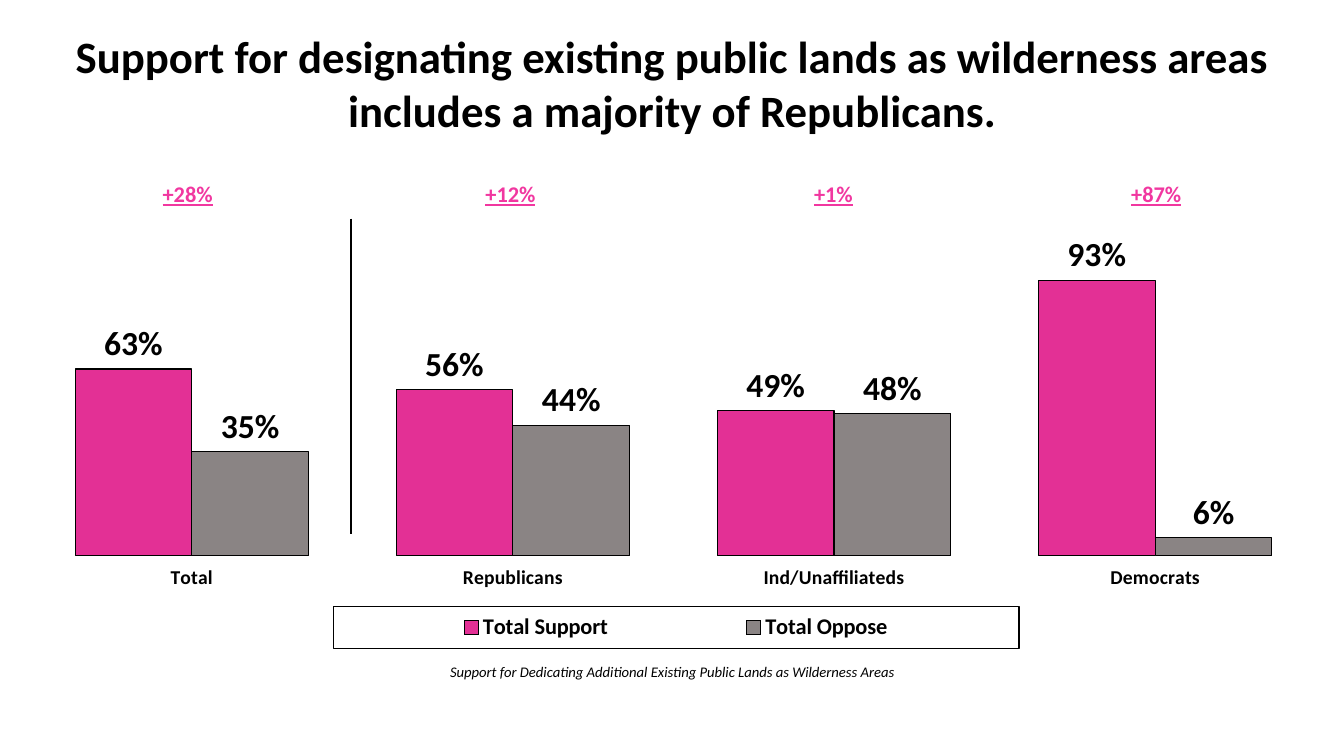
from pptx import Presentation
from pptx.chart.data import CategoryChartData
from pptx.dml.color import RGBColor
from pptx.enum.chart import XL_CHART_TYPE as Kind, XL_LABEL_POSITION as Spot
from pptx.enum.chart import XL_LEGEND_POSITION as Side, XL_TICK_MARK as Tick
from pptx.enum.shapes import MSO_CONNECTOR as Link
from pptx.enum.text import MSO_ANCHOR as Anchor, MSO_AUTO_SIZE as Auto, PP_ALIGN as Align
from pptx.oxml import parse_xml
from pptx.oxml.ns import nsdecls, qn
from pptx.util import Inches, Pt

BLACK = RGBColor(0x00, 0x00, 0x00)
PINK = RGBColor(0xE3, 0x30, 0x95)
ROSE = RGBColor(0xF1, 0x37, 0xA0)
GRAY = RGBColor(0x8A, 0x84, 0x84)

GROUPS = ["Total", "Republicans", "Ind/Unaffiliateds", "Democrats"]
LEADS = ["+28%", "+12%", "+1%", "+87%"]
SERIES = [
    ("Total Support", PINK, [0.63, 0.56, 0.49, 0.93]),
    ("Total Oppose", GRAY, [0.35, 0.44, 0.48, 0.06]),
]


def apply(item, **values):
    for key, value in values.items():
        setattr(item, key, value)


def place(parent, index, box, inner=False):
    for old in parent.findall(qn("c:layout")):
        parent.remove(old)
    rules = '<c:layoutTarget val="inner"/>' if inner else ""
    rules += '<c:xMode val="edge"/><c:yMode val="edge"/>'
    rules += "".join(f'<c:{key} val="{value}"/>' for key, value in zip("xywh", box))
    parent.insert(index, parse_xml(
        f'<c:layout {nsdecls("c")}><c:manualLayout>{rules}</c:manualLayout></c:layout>'))


class Board:
    """Holds the text style and the slide being built."""

    def __init__(self, slide, face, color):
        self.slide, self.face, self.color = slide, face, color

    def style(self, font, size, color=None, **looks):
        apply(font, name=self.face, size=Pt(size), **looks)
        font.color.rgb = color or self.color

    def label(self, frame, words, size, **looks):
        para = frame.paragraphs[0]
        para.alignment = Align.CENTER
        run = para.add_run()
        run.text = words
        self.style(run.font, size, **looks)

    def text(self, box, words, size, **looks):
        frame = self.slide.shapes.add_textbox(*map(Inches, box)).text_frame
        apply(frame, word_wrap=True, auto_size=Auto.SHAPE_TO_FIT_TEXT)
        self.label(frame, words, size, **looks)

    def table(self, box, words, size, **looks):
        grid = self.slide.shapes.add_table(1, len(words), *map(Inches, box)).table
        apply(grid, first_row=False, horz_banding=False)
        for cell, word in zip(grid.rows[0].cells, words):
            cell.fill.background()
            cell.vertical_anchor = Anchor.MIDDLE
            self.label(cell.text_frame, word, size, **looks)

    def line(self, start, end, width):
        link = self.slide.shapes.add_connector(Link.STRAIGHT, *map(Inches, start + end))
        link.line.color.rgb = self.color
        link.line.width = Pt(width)
        link._element.spPr.append(parse_xml(f'<a:effectLst {nsdecls("a")}/>'))

    def chart(self, box, groups, series):
        data = CategoryChartData(number_format="0%")
        data.categories = groups
        for name, _, values in series:
            data.add_series(name, values)
        chart = self.slide.shapes.add_chart(
            Kind.COLUMN_CLUSTERED, *map(Inches, box), data).chart
        chart.has_title = False
        self.style(chart.font, 18)
        plot = chart.plots[0]
        apply(plot, gap_width=75, overlap=0, vary_by_categories=False)
        for bars, (_, color, _) in zip(plot.series, series):
            bars.format.fill.solid()
            bars.format.fill.fore_color.rgb = color
            bars.format.line.color.rgb = self.color
            bars.format.line.width = Pt(0.75)
            tags = bars.data_labels
            apply(tags, show_value=True, position=Spot.OUTSIDE_END,
                  number_format="0%", number_format_is_linked=False)
            self.style(tags.font, 24, bold=True)
        axis = chart.category_axis
        apply(axis, major_tick_mark=Tick.OUTSIDE, has_major_gridlines=False)
        axis.format.line.fill.background()
        self.style(axis.tick_labels.font, 14, bold=True)
        apply(chart.value_axis, minimum_scale=-0.01, maximum_scale=1,
              has_major_gridlines=False, visible=False)
        place(chart._chartSpace.chart.plotArea, 0, (0, 0.174, 1, 0.536), True)
        self.legend(chart)

    def legend(self, chart):
        chart.has_legend = True
        key = chart.legend
        apply(key, position=Side.BOTTOM, include_in_layout=False)
        self.style(key.font, 16, bold=True)
        node = key._element
        place(node, 1, (0.235, 0.796, 0.534, 0.074))
        node.find(qn("c:overlay")).addnext(parse_xml(
            f'<c:spPr {nsdecls("c", "a")}><a:noFill/><a:ln w="9525"><a:solidFill>'
            f'<a:srgbClr val="{self.color}"/></a:solidFill></a:ln></c:spPr>'))


def main():
    deck = Presentation()
    apply(deck, slide_width=Inches(13.33), slide_height=Inches(7.5))
    board = Board(deck.slides.add_slide(deck.slide_layouts[6]), "Calibri", BLACK)
    board.chart((0.31, 1.61, 12.74, 5.54), GROUPS, SERIES)
    board.table((0.26, 1.73, 12.81, 0.41), LEADS, 16, color=ROSE, bold=True, underline=True)
    board.text((0.29, 0.24, 12.76, 1.18),
               "Support for designating existing public lands as wilderness areas "
               "includes a majority of Republicans.", 32, bold=True)
    board.line((3.48, 2.17), (3.48, 5.3), 1)
    board.text((0.29, 6.53, 12.76, 0.28),
               "Support for Dedicating Additional Existing Public Lands as Wilderness Areas",
               10.5, italic=True)
    deck.save("out.pptx")


if __name__ == "__main__":
    main()
